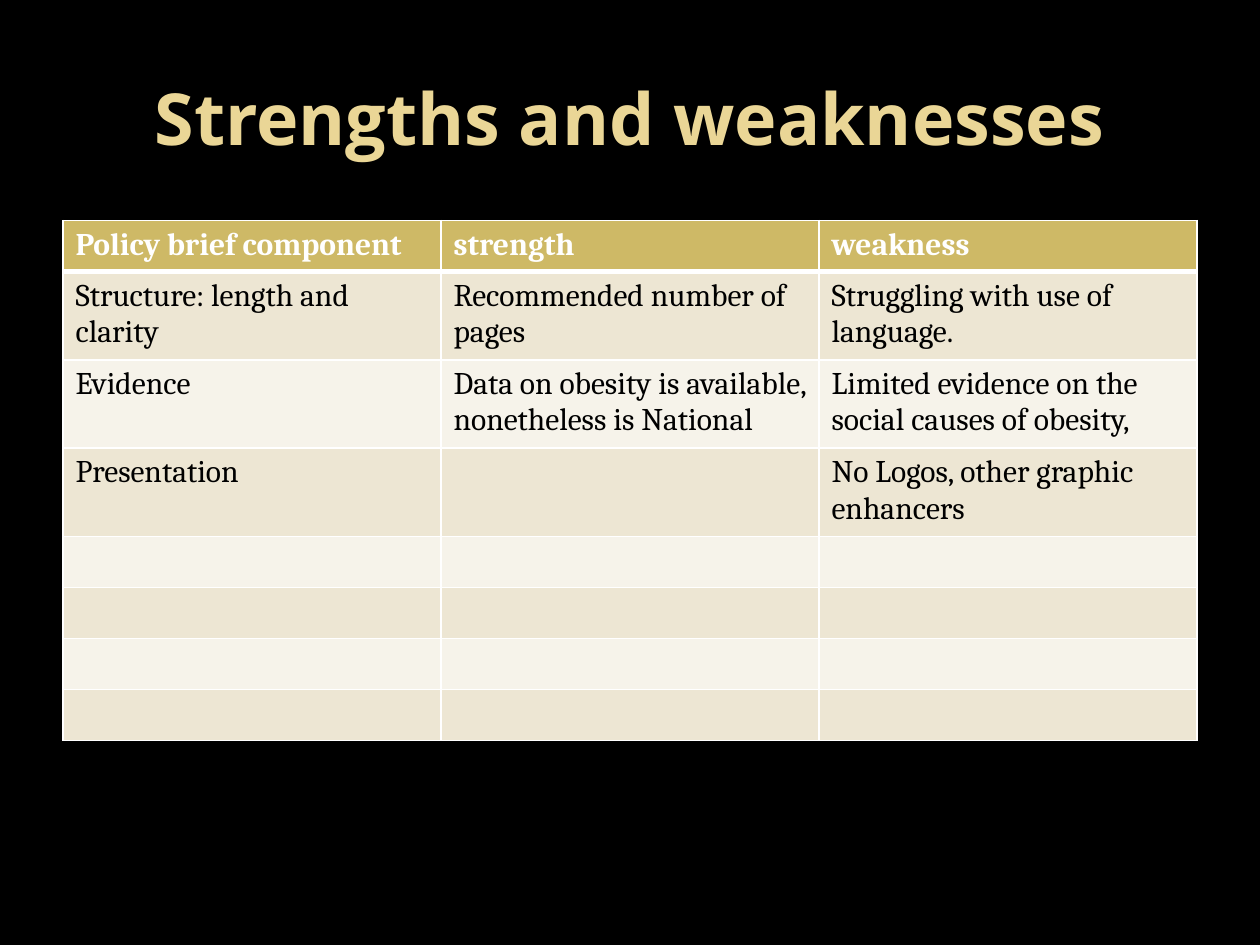
from lxml.etree import SubElement
from pptx import Presentation
from pptx.dml.color import RGBColor
from pptx.enum.text import MSO_ANCHOR as Anchor, PP_ALIGN as Align
from pptx.oxml.ns import qn
from pptx.util import Pt

BLACK, WHITE = "000000", "FFFFFF"
TITLE_GOLD, HEADER_GOLD = "EAD696", "CEB966"
BAND_FILLS = ("F6F3EA", "EDE6D3")
COLUMN_WIDTH, ROW_HEIGHT = 216, 29.2
ROWS = [
    ("Policy brief component", "strength", "weakness"),
    ("Structure: length and clarity", "Recommended number of pages",
     "Struggling with use of language."),
    ("Evidence", "Data on obesity is available, nonetheless is National",
     "Limited evidence on the social causes of obesity,"),
    ("Presentation", "", "No Logos, other graphic enhancers"),
] + [("", "", "")] * 4


def set_fill(fill, color):
    fill.solid()
    fill.fore_color.rgb = RGBColor.from_string(color)


def write_text(text_frame, text, *, size, font, color, bold=False, align=Align.LEFT):
    paragraph = text_frame.paragraphs[0]
    paragraph.alignment = align
    paragraph.font.size = Pt(size)
    if not text:
        return
    run = paragraph.add_run()
    run.text = text
    run.font.size = Pt(size)
    run.font.name = font
    run.font.bold = bold
    run.font.color.rgb = RGBColor.from_string(color)


def set_borders(cell, color, **widths):
    """Draw cell borders; widths are points keyed by side: L, R, T, B."""
    properties = cell._tc.get_or_add_tcPr()
    for side, width in widths.items():
        line = SubElement(properties, qn(f"a:ln{side}"), w=str(Pt(width)))
        solid = SubElement(line, qn("a:solidFill"))
        SubElement(solid, qn("a:srgbClr"), val=color)


def add_title(slide, text):
    text_frame = slide.shapes.add_textbox(Pt(36), Pt(21.6), Pt(648), Pt(90)).text_frame
    text_frame.word_wrap = True
    text_frame.vertical_anchor = Anchor.MIDDLE
    write_text(text_frame, text, size=41, font="Open Sans", color=TITLE_GOLD,
               bold=True, align=Align.CENTER)


def add_review_table(slide, rows):
    column_count = len(rows[0])
    table = slide.shapes.add_table(
        len(rows), column_count, Pt(36), Pt(126),
        Pt(COLUMN_WIDTH * column_count), Pt(ROW_HEIGHT * len(rows))).table
    for column in table.columns:
        column.width = Pt(COLUMN_WIDTH)
    for row_index, texts in enumerate(rows):
        table.rows[row_index].height = Pt(ROW_HEIGHT)
        header = row_index == 0
        for column_index, text in enumerate(texts):
            cell = table.cell(row_index, column_index)
            set_borders(cell, WHITE, L=1, R=1, T=3 if row_index == 1 else 1,
                        B=3 if header else 1)
            set_fill(cell.fill, HEADER_GOLD if header else BAND_FILLS[row_index % 2])
            write_text(cell.text_frame, text, size=18, font="Cambria",
                       color=WHITE if header else BLACK, bold=header)


def main():
    presentation = Presentation()
    presentation.slide_width, presentation.slide_height = Pt(720), Pt(540)
    slide = presentation.slides.add_slide(presentation.slide_layouts[6])
    set_fill(slide.background.fill, BLACK)
    add_title(slide, "Strengths and weaknesses")
    add_review_table(slide, ROWS)
    presentation.save("out.pptx")


if __name__ == "__main__":
    main()
